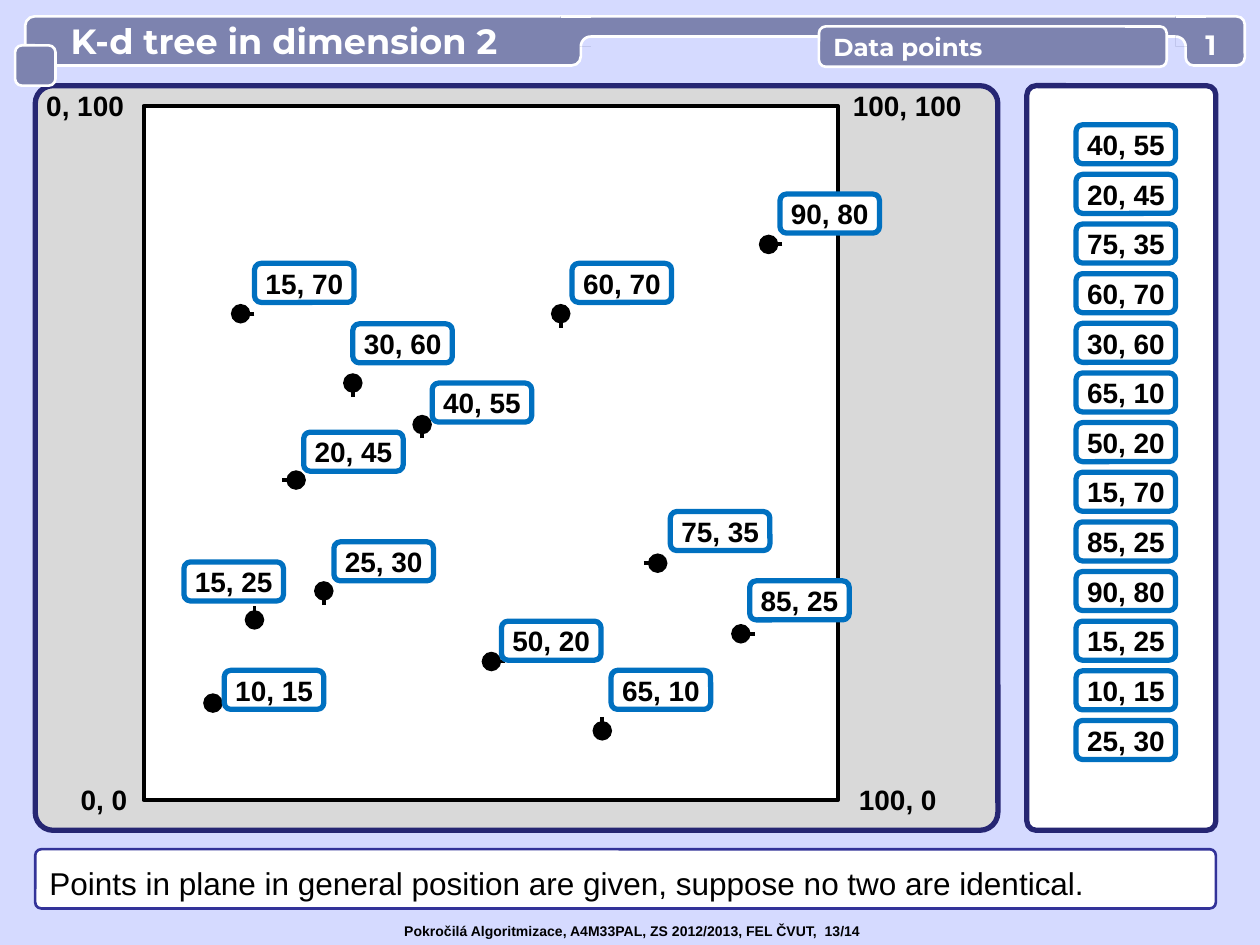
from dataclasses import dataclass
from math import cos, pi, sin

from lxml import etree
from pptx import Presentation
from pptx import util as u
from pptx.dml.color import RGBColor
from pptx.enum import shapes, text
from pptx.oxml.ns import qn

BLACK, WHITE, PAGE = "000000", "FFFFFF", "D5DAFF"
NAVY, BLUE, BAR, GREY = "262673", "0070C0", "7D83AF", "D9D9D9"
ROUND, RECTANGLE = shapes.MSO_SHAPE.ROUNDED_RECTANGLE, shapes.MSO_SHAPE.RECTANGLE
LABEL_WIDTH, LABEL_HEIGHT = 0.79, 0.31
STUB = 0.11


@dataclass
class DataPoint:
    name: str
    dot: tuple[float, float]
    stub: tuple[int, int]  # direction of the short tick
    label: tuple[float, float]


@dataclass
class Style:
    size: float = 16
    font: str = "Arial"
    color: str = BLACK
    bold: bool = True
    centered: bool = True
    inset: float = 0
    spacing: float = 1.0


# In the order of the list on the right
POINTS = [
    DataPoint("40, 55", (3.35, 3.37), (0, 1), (3.43, 3.04)),
    DataPoint("20, 45", (2.35, 3.81), (-1, 0), (2.41, 3.43)),
    DataPoint("75, 35", (5.22, 4.47), (-1, 0), (5.32, 4.06)),
    DataPoint("60, 70", (4.45, 2.49), (0, 1), (4.54, 2.09)),
    DataPoint("30, 60", (2.80, 3.04), (0, 1), (2.80, 2.57)),
    DataPoint("65, 10", (4.78, 5.80), (0, -1), (4.85, 5.32)),
    DataPoint("50, 20", (3.90, 5.25), (1, 0), (3.98, 4.93)),
    DataPoint("15, 70", (1.91, 2.49), (1, 0), (2.02, 2.09)),
    DataPoint("85, 25", (5.88, 5.03), (1, 0), (5.95, 4.61)),
    DataPoint("90, 80", (6.10, 1.94), (1, 0), (6.19, 1.54)),
    DataPoint("15, 25", (2.02, 4.92), (0, -1), (1.46, 4.46)),
    DataPoint("10, 15", (1.69, 5.58), (1, 0), (1.78, 5.32)),
    DataPoint("25, 30", (2.57, 4.69), (0, 1), (2.65, 4.30)),
]


def rgb(color: str) -> RGBColor:
    return RGBColor.from_string(color)


def paint(shape, fill: str | None, line: str | None, width: float = 1.5) -> None:
    shape.shadow.inherit = False
    if fill:
        shape.fill.solid()
        shape.fill.fore_color.rgb = rgb(fill)
    else:
        shape.fill.background()
    if line:
        shape.line.color.rgb = rgb(line)
        shape.line.width = u.Pt(width)
    else:
        shape.line.fill.background()


def add_box(slide, left: float, top: float, width: float, height: float,
            fill: str | None, line: str | None, line_width: float = 1.5,
            kind=ROUND, corner: float | None = None):
    shape = slide.shapes.add_shape(kind, *map(u.Inches, (left, top, width, height)))
    if corner is not None:
        shape.adjustments[0] = corner
    paint(shape, fill, line, line_width)
    return shape


def write(shape, words: str, style: Style) -> None:
    frame = shape.text_frame
    frame.word_wrap = True
    frame.vertical_anchor = text.MSO_ANCHOR.MIDDLE
    frame.margin_left = frame.margin_right = u.Inches(style.inset)
    frame.margin_top = frame.margin_bottom = 0
    paragraph = frame.paragraphs[0]
    paragraph.text = words
    paragraph.alignment = text.PP_ALIGN.CENTER if style.centered else text.PP_ALIGN.LEFT
    paragraph.line_spacing = style.spacing
    font = paragraph.font
    font.name, font.size, font.bold = style.font, u.Pt(style.size), style.bold
    font.color.rgb = rgb(style.color)


def add_text(slide, left: float, top: float, width: float, height: float,
             words: str, style: Style) -> None:
    write(slide.shapes.add_textbox(*map(u.Inches, (left, top, width, height))), words, style)


def add_label(slide, name: str, left: float, top: float) -> None:
    write(add_box(slide, left, top, LABEL_WIDTH, LABEL_HEIGHT, WHITE, BLUE, 3), name, Style())


def add_line(slide, start: tuple[float, float], end: tuple[float, float],
             color: str, width: float, dot: bool = False) -> None:
    connector = slide.shapes.add_connector(
        shapes.MSO_CONNECTOR.STRAIGHT, *map(u.Inches, (*start, *end)))
    connector.line.color.rgb = rgb(color)
    connector.line.width = u.Pt(width)
    if dot:
        etree.SubElement(connector.line._get_or_add_ln(), qn("a:tailEnd"),
                         type="oval", w="lg", len="lg")
    etree.SubElement(connector._element.spPr, qn("a:effectLst"))


def add_fillet(slide, center_x: float, center_y: float, side: int) -> None:
    """Quarter disc in the page colour with a white arc; side is -1 left, 1 right."""
    radius, steps = 0.08, 12
    angles = [pi / 2 * step / steps for step in range(steps + 1)]
    arc = [(u.Inches(center_x + side * radius * sin(angle)),
            u.Inches(center_y - radius * cos(angle))) for angle in angles]
    center = (u.Inches(center_x), u.Inches(center_y))
    for vertices, closed, fill, line in (([*arc, center], True, PAGE, None),
                                         (arc, False, None, WHITE)):
        builder = slide.shapes.build_freeform(*vertices[0])
        builder.add_line_segments(vertices[1:], close=closed)
        paint(builder.convert_to_shape(), fill, line)


def add_joint(slide, left: float, width: float, center_x: float, side: int) -> None:
    """Smooth join between the thin header strip and a wider header block."""
    add_box(slide, left, 0.13, width, 0.24, BAR, None, kind=RECTANGLE)
    add_line(slide, (left, 0.13), (left + width, 0.13), WHITE, 1.5)
    add_fillet(slide, center_x, 0.37, side)


def main() -> None:
    presentation = Presentation()
    presentation.slide_width, presentation.slide_height = u.Inches(10), u.Inches(7.5)
    slide = presentation.slides.add_slide(presentation.slide_layouts[6])
    slide.background.fill.solid()
    slide.background.fill.fore_color.rgb = rgb(PAGE)

    # Plot and list panels
    add_box(slide, 0.28, 0.68, 7.64, 5.91, GREY, NAVY, 3, corner=0.024)
    add_box(slide, 1.14, 0.84, 5.51, 5.51, WHITE, BLACK, 2.25, kind=RECTANGLE)
    add_box(slide, 8.15, 0.68, 1.5, 5.91, WHITE, NAVY, 3, corner=0.049)

    # List of points, then dots with ticks, then their labels
    for row, point in enumerate(POINTS):
        add_label(slide, point.name, 8.54, 0.99 + row * 0.394)
    for point in POINTS:
        (x, y), (across, down) = point.dot, point.stub
        add_line(slide, (x + across * STUB, y + down * STUB), point.dot, BLACK, 2.25, dot=True)
    for point in POINTS:
        add_label(slide, point.name, *point.label)

    # Statement
    statement = add_box(slide, 0.28, 6.74, 9.37, 0.47, WHITE, "333399", corner=0.103)
    write(statement, "Points in plane in general position are given, suppose no two are identical.",
          Style(18, bold=False, centered=False, inset=0.1, spacing=1.2))

    # Header
    title = add_box(slide, 0.2, 0.13, 4.41, 0.39, BAR, WHITE, corner=0.188)
    write(title, "K-d tree in dimension 2",
          Style(20, "Montserrat", WHITE, centered=False, inset=0.34))
    add_box(slide, 4.61, 0.13, 4.88, 0.16, BAR, WHITE, corner=0.5)
    add_joint(slide, 4.45, 0.24, 4.69, -1)
    add_box(slide, 0.12, 0.36, 0.32, 0.32, BAR, WHITE)
    add_box(slide, 9.41, 0.13, 0.47, 0.39, BAR, WHITE)
    add_joint(slide, 9.33, 0.24, 9.33, 1)
    topic = add_box(slide, 6.5, 0.21, 2.76, 0.32, BAR, WHITE)
    write(topic, "Data points", Style(14, "Montserrat", WHITE, centered=False, inset=0.1))
    add_text(slide, 9.41, 0.22, 0.4, 0.27, "1", Style(16, "Montserrat", WHITE))

    # Corner coordinates
    for words, left, top, width in (("0, 0", 0.43, 6.19, 0.79), ("100, 0", 6.73, 6.19, 0.79),
                                    ("0, 100", 0.28, 0.68, 0.79), ("100, 100", 6.73, 0.68, 0.94)):
        add_text(slide, left, top, width, LABEL_HEIGHT, words, Style())

    # Footer
    add_text(slide, 3.11, 7.27, 3.9, 0.24,
             "Pokročilá Algoritmizace, A4M33PAL, ZS 2012/2013, FEL ČVUT,  13/14",
             Style(8, centered=False, inset=0.1))

    presentation.save("out.pptx")


if __name__ == "__main__":
    main()
